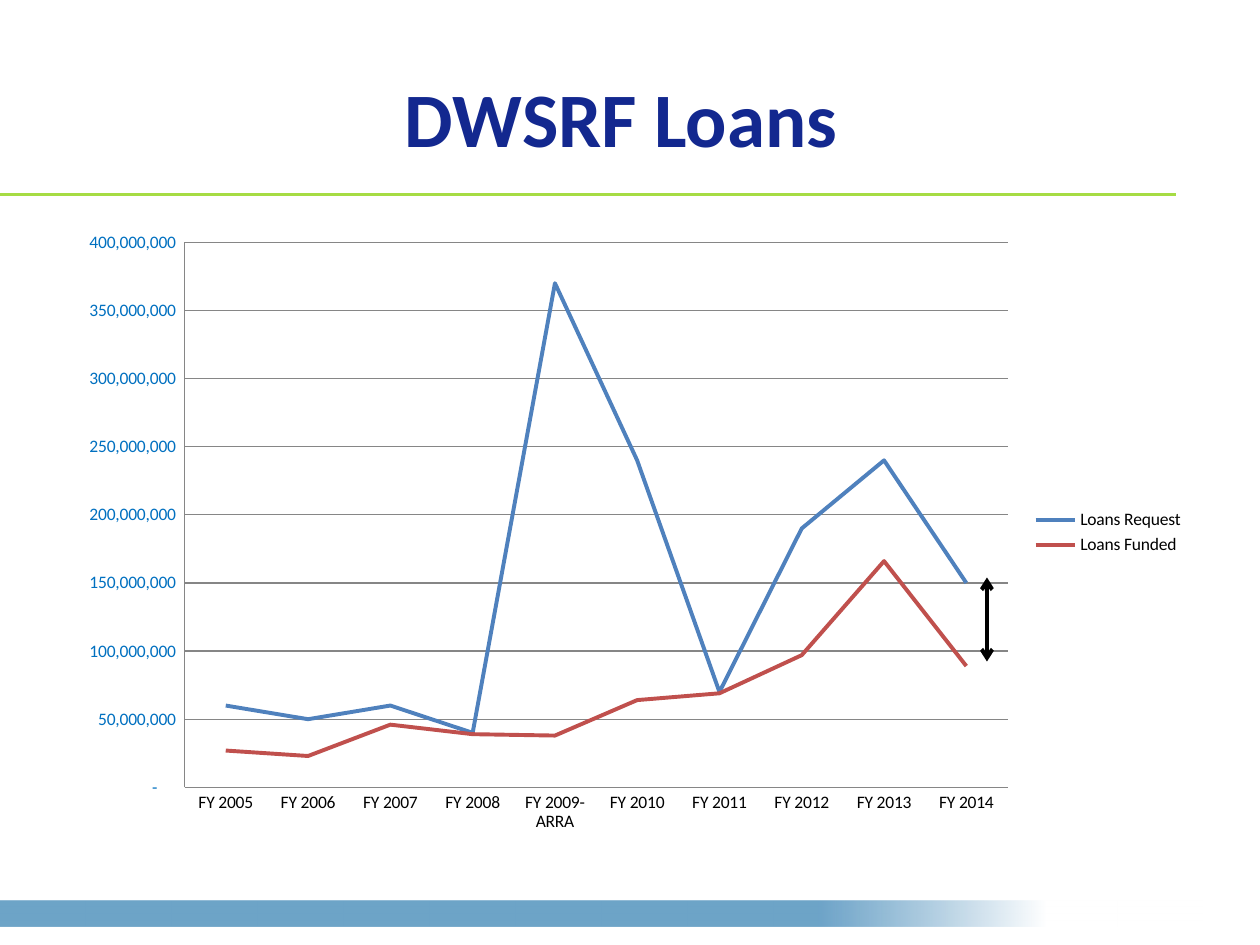
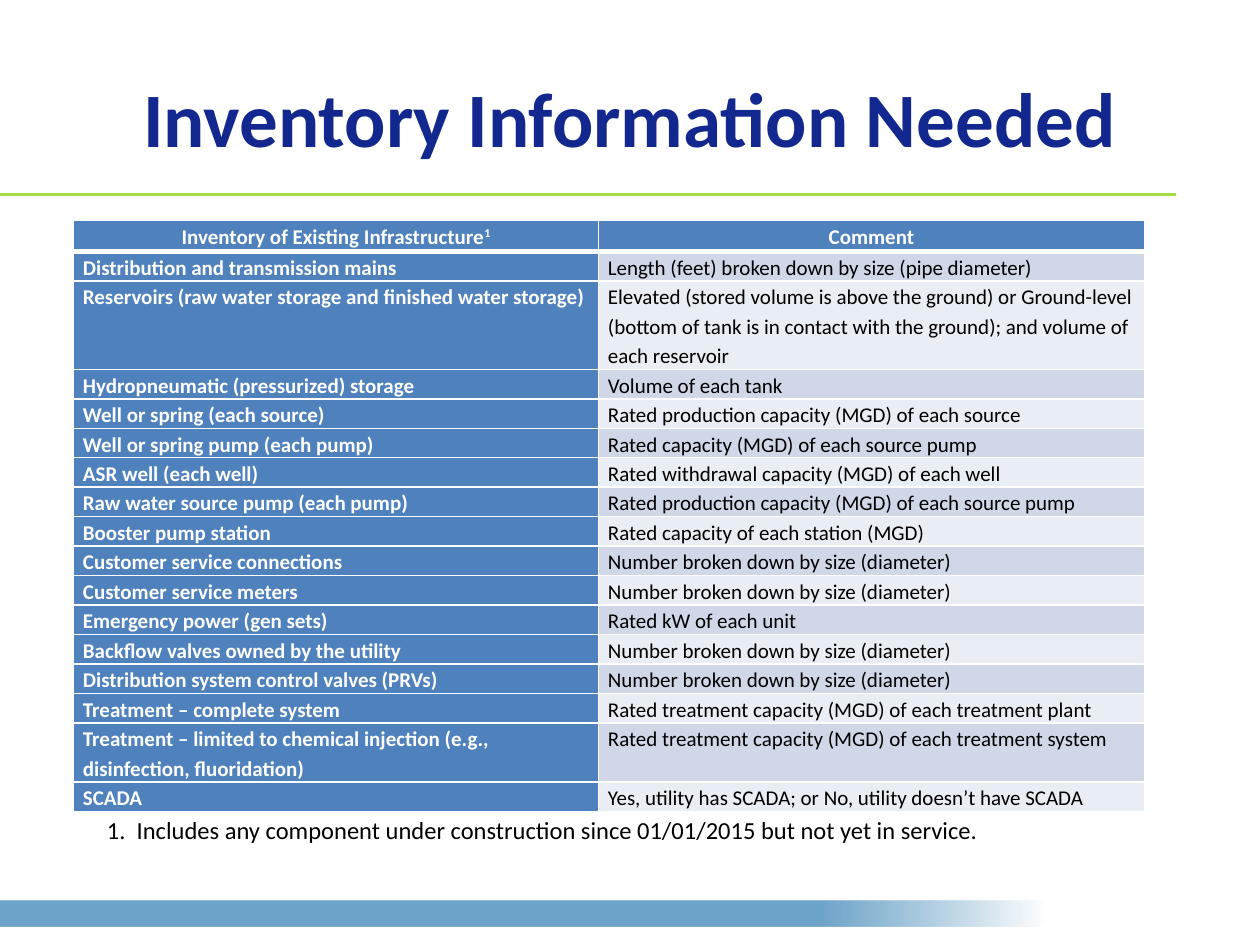
from copy import deepcopy

from lxml import etree
from pptx import Presentation
from pptx.chart.data import CategoryChartData
from pptx.dml.color import RGBColor
from pptx.enum.chart import XL_CHART_TYPE, XL_LEGEND_POSITION, XL_MARKER_STYLE, XL_TICK_MARK
from pptx.enum.shapes import MSO_CONNECTOR, MSO_SHAPE
from pptx.enum.text import MSO_ANCHOR, PP_ALIGN
from pptx.oxml.ns import qn
from pptx.util import Pt

LINE_CHART = XL_CHART_TYPE.LINE
LEGEND_RIGHT = XL_LEGEND_POSITION.RIGHT
NO_MARKER = XL_MARKER_STYLE.NONE
NO_TICK = XL_TICK_MARK.NONE
STRAIGHT = MSO_CONNECTOR.STRAIGHT
RECT = MSO_SHAPE.RECTANGLE
MIDDLE = MSO_ANCHOR.MIDDLE
LEFT = PP_ALIGN.LEFT
CENTER = PP_ALIGN.CENTER

NAVY = RGBColor(0x13, 0x28, 0x8F)
BAND_BLUE = RGBColor(0x5E, 0x9A, 0xC2)
RULE_GREEN = RGBColor(0xA6, 0xDC, 0x44)
AXIS_BLUE = RGBColor(0x00, 0x70, 0xC0)
GRID_GRAY = RGBColor(0x86, 0x86, 0x86)
BLUE = RGBColor(0x4F, 0x81, 0xBD)
RED = RGBColor(0xC0, 0x50, 0x4D)
ROW_DARK = RGBColor(0xD0, 0xD8, 0xE8)
ROW_LIGHT = RGBColor(0xE9, 0xED, 0xF4)
WHITE = RGBColor(0xFF, 0xFF, 0xFF)
BLACK = RGBColor(0x00, 0x00, 0x00)

TITLE_FONT = {"name": "Calibri", "size": Pt(44), "bold": True}
CHART_FONT = {"name": "Calibri", "size": Pt(10), "bold": False}
HEAD_FONT = {"name": "Calibri", "size": Pt(12), "bold": True}
BODY_FONT = {"name": "Calibri", "size": Pt(12), "bold": False}
NOTE_FONT = {"name": "Calibri", "size": Pt(14), "bold": False}
CELL_MARGINS = {"margin_left": Pt(5.4), "margin_right": Pt(5.4),
                "margin_top": 0, "margin_bottom": 0}

YEARS = ["FY 2005", "FY 2006", "FY 2007", "FY 2008", "FY 2009-ARRA",
         "FY 2010", "FY 2011", "FY 2012", "FY 2013", "FY 2014"]
MILLION = 1_000_000
LOANS = [
    ("Loans Request", BLUE, [60, 50, 60, 40, 370, 240, 70, 190, 240, 150]),
    ("Loans Funded", RED, [27, 23, 46, 39, 38, 64, 69, 97, 166, 89]),
]
AMOUNT_FORMAT = '_(* #,##0_);_(* \\(#,##0\\);_(* "-"??_);_('
CHART_WIDTH, CHART_HEIGHT = 648, 356.4

BY_DIAMETER = "Number broken down by size (diameter)"
INVENTORY = [
    ("Inventory of Existing Infrastructure", "Comment"),
    ("Distribution and transmission mains", "Length (feet) broken down by size (pipe diameter)"),
    ("Reservoirs (raw water storage and finished water storage)",
     "Elevated (stored volume is above the ground) or Ground-level (bottom of tank is in "
     "contact with the ground); and volume of each reservoir"),
    ("Hydropneumatic (pressurized) storage", "Volume of each tank"),
    ("Well or spring (each source)", "Rated production capacity (MGD) of each source"),
    ("Well or spring pump (each pump)", "Rated capacity (MGD) of each source pump"),
    ("ASR well (each well)", "Rated withdrawal capacity (MGD) of each well"),
    ("Raw water source pump (each pump)", "Rated production capacity (MGD) of each source pump"),
    ("Booster pump station", "Rated capacity of each station (MGD)"),
    ("Customer service connections", BY_DIAMETER),
    ("Customer service meters", BY_DIAMETER),
    ("Emergency power (gen sets)", "Rated kW of each unit"),
    ("Backflow valves owned by the utility", BY_DIAMETER),
    ("Distribution system control valves (PRVs)", BY_DIAMETER),
    ("Treatment – complete system", "Rated treatment capacity (MGD) of each treatment plant"),
    ("Treatment – limited to chemical injection (e.g., disinfection, fluoridation)",
     "Rated treatment capacity (MGD) of each treatment system"),
    ("SCADA", "Yes, utility has SCADA; or No, utility doesn’t have SCADA"),
]
ROW_HEIGHT = 15
TALL_ROWS = {0: 17.75, 2: 27, 15: 18}


def set_attrs(target, values):
    for name, value in values.items():
        setattr(target, name, value)


def set_font(font, values, color):
    set_attrs(font, values)
    font.color.rgb = color


def sub(parent, tag, **attrs):
    return etree.SubElement(parent, qn(tag), attrs)


def add_line(slide, x1, y1, x2, y2, color, width, arrows=False):
    line = slide.shapes.add_connector(STRAIGHT, Pt(x1), Pt(y1), Pt(x2), Pt(y2))
    line.line.color.rgb = color
    line.line.width = Pt(width)
    sp_pr = line._element.spPr
    if arrows:
        for end in ("a:headEnd", "a:tailEnd"):
            sub(sp_pr.find(qn("a:ln")), end, type="arrow")
    sub(sp_pr, "a:effectLst")


def add_band(slide):
    sp = slide.shapes.add_shape(RECT, 0, Pt(514.8), Pt(687), Pt(14.8))
    sp.shadow.inherit = False
    sp.line.fill.background()
    sp.fill.gradient()
    sp.fill.gradient_angle = 0
    stops = zip(sp.fill.gradient_stops, (0.68, 0.87), (BAND_BLUE, WHITE))
    for stop, position, color in stops:
        stop.position = position
        stop.color.rgb = color
    sub(next(sp._element.iter(qn("a:srgbClr"))), "a:alpha", val="90000")


def add_title_slide(prs, text):
    slide = prs.slides.add_slide(prs.slide_layouts[5])
    add_band(slide)
    add_line(slide, 0, 111.3, 672, 111.3, RULE_GREEN, 1.5)
    title = slide.shapes.title
    set_attrs(title, {"left": Pt(36), "top": Pt(21.6), "width": Pt(648), "height": Pt(90)})
    tf = title.text_frame
    tf.vertical_anchor = MIDDLE
    p = tf.paragraphs[0]
    p.alignment = CENTER
    r = p.add_run()
    r.text = text
    set_font(r.font, TITLE_FONT, NAVY)
    return slide


def place_plot(chart, left, top, width, height):
    plot_area = chart._chartSpace.chart.plotArea
    for old in plot_area.findall(qn("c:layout")):
        plot_area.remove(old)
    layout = etree.Element(qn("c:layout"))
    plot_area.insert(0, layout)
    manual = sub(layout, "c:manualLayout")
    for tag, val in (("layoutTarget", "inner"), ("xMode", "edge"), ("yMode", "edge"),
                     ("x", left / CHART_WIDTH), ("y", top / CHART_HEIGHT),
                     ("w", width / CHART_WIDTH), ("h", height / CHART_HEIGHT)):
        sub(manual, f"c:{tag}", val=str(val))


def move_last_series_to_hidden_axis(chart):
    plot_area = chart._chartSpace.chart.plotArea
    first = plot_area.find(qn("c:lineChart"))
    second = deepcopy(first)
    first.remove(first.findall(qn("c:ser"))[-1])
    second.remove(second.find(qn("c:ser")))
    first.addnext(second)
    cat_ax, val_ax = (deepcopy(plot_area.find(qn(tag))) for tag in ("c:catAx", "c:valAx"))
    plot_area.find(qn("c:valAx")).addnext(val_ax)
    val_ax.addnext(cat_ax)
    val_ax.remove(val_ax.find(qn("c:majorGridlines")))
    for axis, own, other in ((cat_ax, "101", "102"), (val_ax, "102", "101")):
        axis.find(qn("c:axId")).set("val", own)
        axis.find(qn("c:crossAx")).set("val", other)
        axis.find(qn("c:delete")).set("val", "1")
    val_ax.find(qn("c:axPos")).set("val", "r")
    val_ax.find(qn("c:crosses")).set("val", "max")
    for ref, own in zip(second.findall(qn("c:axId")), ("101", "102")):
        ref.set("val", own)


def add_loans_chart(slide):
    data = CategoryChartData()
    data.categories = YEARS
    for name, _, amounts in LOANS:
        data.add_series(name, [amount * MILLION for amount in amounts])
    chart = slide.shapes.add_chart(
        LINE_CHART, Pt(36), Pt(126), Pt(CHART_WIDTH), Pt(CHART_HEIGHT), data).chart
    set_font(chart.font, CHART_FONT, BLACK)
    chart.has_title = False
    chart.has_legend = True
    set_attrs(chart.legend, {"position": LEGEND_RIGHT, "include_in_layout": False})

    plot = chart.plots[0]
    plot.vary_by_categories = False
    for series, (_, color, _) in zip(plot.series, LOANS):
        series.smooth = False
        series.marker.style = NO_MARKER
        series.format.line.color.rgb = color
        series.format.line.width = Pt(2.25)

    amounts = chart.value_axis
    set_attrs(amounts, {"minimum_scale": 0, "maximum_scale": 400 * MILLION,
                        "major_unit": 50 * MILLION, "has_major_gridlines": True})
    labels = amounts.tick_labels
    set_attrs(labels, {"number_format": AMOUNT_FORMAT, "number_format_is_linked": False})
    set_font(labels.font, CHART_FONT, AXIS_BLUE)
    for axis in (amounts, chart.category_axis):
        axis.major_tick_mark = axis.minor_tick_mark = NO_TICK
        axis.format.line.color.rgb = GRID_GRAY
    amounts.major_gridlines.format.line.color.rgb = GRID_GRAY

    place_plot(chart, 69.5, 12.5, 470.25, 311.5)
    move_last_series_to_hidden_axis(chart)


def set_borders(cell, widths):
    tc_pr = cell._tc.get_or_add_tcPr()
    for side, width in widths.items():
        ln = sub(tc_pr, f"a:ln{side}", w=str(Pt(width)))
        sub(sub(ln, "a:solidFill"), "a:srgbClr", val=str(WHITE))


def fill_cell(cell, text, font, color, fill, align, borders):
    set_attrs(cell, CELL_MARGINS)
    set_borders(cell, borders)
    cell.fill.solid()
    cell.fill.fore_color.rgb = fill
    p = cell.text_frame.paragraphs[0]
    set_attrs(p, {"alignment": align, "line_spacing": 1.15})
    r = p.add_run()
    r.text = text
    set_font(r.font, font, color)


def add_inventory_table(slide):
    heights = [TALL_ROWS.get(i, ROW_HEIGHT) for i in range(len(INVENTORY))]
    table = slide.shapes.add_table(
        len(INVENTORY), 2, Pt(42), Pt(126), Pt(612), Pt(sum(heights))).table
    set_attrs(table, {"first_row": False, "horz_banding": False})
    for column, width in zip(table.columns, (300, 312)):
        column.width = Pt(width)
    for i, (texts, height) in enumerate(zip(INVENTORY, heights)):
        table.rows[i].height = Pt(height)
        borders = {"L": 1, "R": 1, "T": 3 if i == 1 else 1, "B": 3 if i == 0 else 1}
        for j, text in enumerate(texts):
            if i == 0 or j == 0:
                look = HEAD_FONT, WHITE, BLUE
            else:
                look = BODY_FONT, BLACK, ROW_DARK if i % 2 else ROW_LIGHT
            fill_cell(table.cell(i, j), text, *look, LEFT if i else CENTER, borders)
    mark = table.cell(0, 0).text_frame.paragraphs[0].add_run()
    mark.text = "1"
    set_font(mark.font, HEAD_FONT, WHITE)
    mark._r.get_or_add_rPr().set("baseline", "30000")


def add_footnote(slide, text):
    tf = slide.shapes.add_textbox(Pt(54), Pt(462.2), Pt(594), Pt(24.5)).text_frame
    tf.word_wrap = True
    p = tf.paragraphs[0]
    p_pr = p._p.get_or_add_pPr()
    p_pr.set("marL", str(Pt(17)))
    p_pr.set("indent", str(-Pt(17)))
    sub(p_pr, "a:buFont", typeface="Calibri")
    sub(p_pr, "a:buAutoNum", type="arabicPeriod")
    r = p.add_run()
    r.text = text
    set_font(r.font, NOTE_FONT, BLACK)


def main():
    prs = Presentation()
    prs.slide_width, prs.slide_height = Pt(720), Pt(540)

    loans = add_title_slide(prs, "DWSRF Loans ")
    add_loans_chart(loans)
    add_line(loans, 564, 330, 564, 378, BLACK, 2.25, arrows=True)

    inventory = add_title_slide(prs, "Inventory Information Needed")
    add_inventory_table(inventory)
    add_footnote(inventory, "Includes any component under construction since 01/01/2015 but not yet in service.")

    prs.save("out.pptx")


if __name__ == "__main__":
    main()
